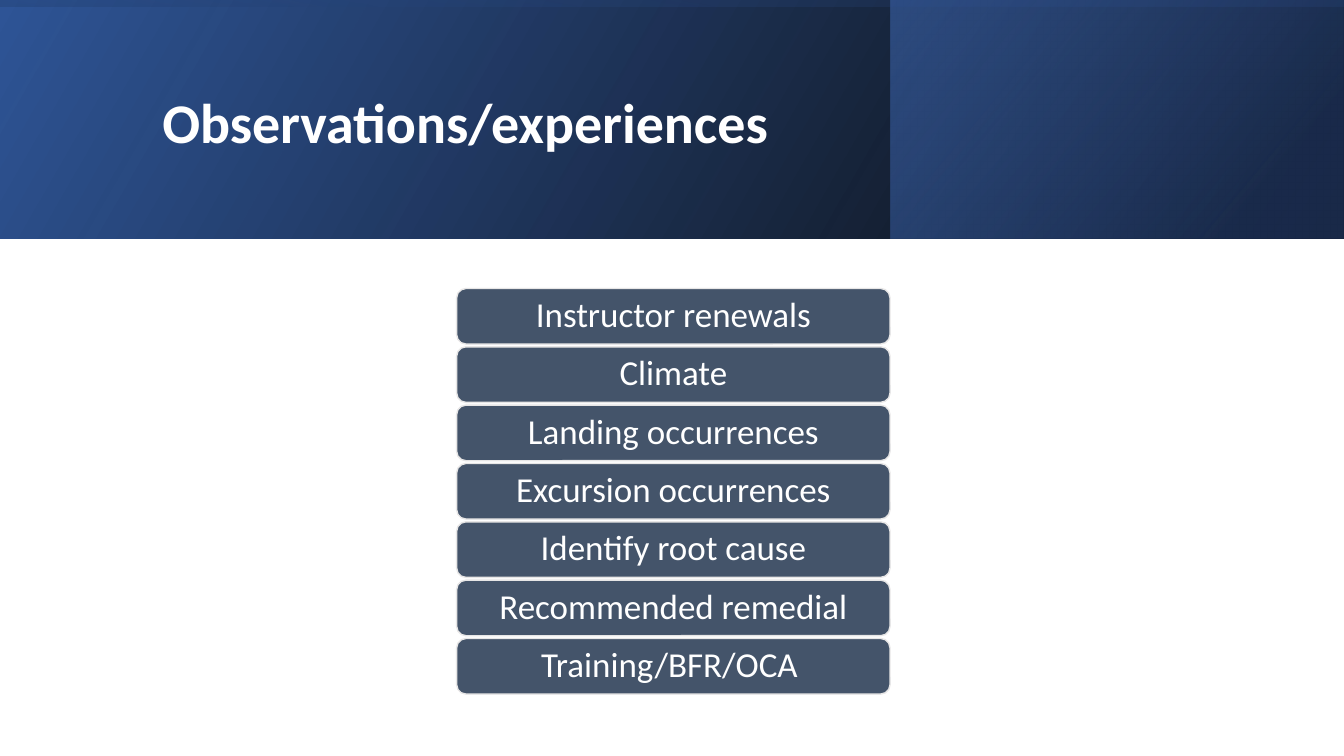
from lxml import etree
from pptx import Presentation
from pptx.dml.color import RGBColor
from pptx.enum.shapes import MSO_SHAPE
from pptx.enum.text import MSO_ANCHOR, PP_ALIGN
from pptx.oxml.ns import qn
from pptx.util import Cm, Pt

RECT = MSO_SHAPE.RECTANGLE
ROUND = MSO_SHAPE.ROUNDED_RECTANGLE
MIDDLE = MSO_ANCHOR.MIDDLE
CENTER = PP_ALIGN.CENTER


def color(code):
    return RGBColor.from_string(code)


def write(shape, text, size, bold=False):
    frame = shape.text_frame
    frame.word_wrap = True
    frame.vertical_anchor = MIDDLE
    para = frame.paragraphs[0]
    para.line_spacing = 0.9
    run = para.add_run()
    run.text = text
    run.font.name = "Calibri"
    run.font.size = Pt(size)
    run.font.bold = bold
    run.font.color.rgb = color("FFFFFF")
    return para


deck = Presentation()
deck.slide_width, deck.slide_height = Cm(33.87), Cm(19.05)
slide = deck.slides.add_slide(deck.slide_layouts[6])
shapes = slide.shapes

# Header band: three layered gradients, mirrored left to right
# Each stop is position, colour, opacity in percent
wide, high = 33.87, 6.02
mid = (wide - high) / 2
bands = [
    ((0, 0, wide, high), 0, 30, [(0, "000000", 96), (100, "2F5597", 100)]),
    ((22.45, 0, 11.4, high), 0, 40, [(19, "203864", 68), (100, "4472C4", 48)]),
    ((mid, -mid, high, wide), 270, 10, [(23, "2F5597", 16), (99, "000000", 45)]),
]
for place, turn, angle, stops in bands:
    band = shapes.add_shape(RECT, *[Cm(side) for side in place])
    band.shadow.inherit = False
    band.rotation = turn
    band.line.fill.background()
    band.fill.gradient()
    band.fill.gradient_angle = angle
    for stop, (spot, code, _) in zip(band.fill.gradient_stops, stops):
        stop.position = spot / 100
        stop.color.rgb = color(code)
    props = band._element.spPr
    props.find(qn("a:xfrm")).set("flipH", "1")
    for tint, (_, _, solid) in zip(props.iter(qn("a:srgbClr")), stops):
        etree.SubElement(tint, qn("a:alpha")).set("val", str(solid * 1000))

# Title
title = shapes.add_textbox(Cm(3.84), Cm(0.97), Cm(27), Cm(4.37))
write(title, "Observations/experiences", 40, True)

# Stack of topics
topics = [
    "Instructor renewals",
    "Climate",
    "Landing occurrences",
    "Excursion occurrences",
    "Identify root cause",
    "Recommended remedial",
    "Training/BFR/OCA ",
]
top, step = 7.27, 1.47
for row, topic in enumerate(topics):
    box = shapes.add_shape(ROUND, Cm(11.51), Cm(top + row * step), Cm(10.92), Cm(1.4))
    box.shadow.inherit = False
    box.fill.solid()
    box.fill.fore_color.rgb = color("44546A")
    box.line.color.rgb = color("E7E6E6")
    box.line.width = Pt(1)
    write(box, topic, 25).alignment = CENTER

deck.save("out.pptx")
